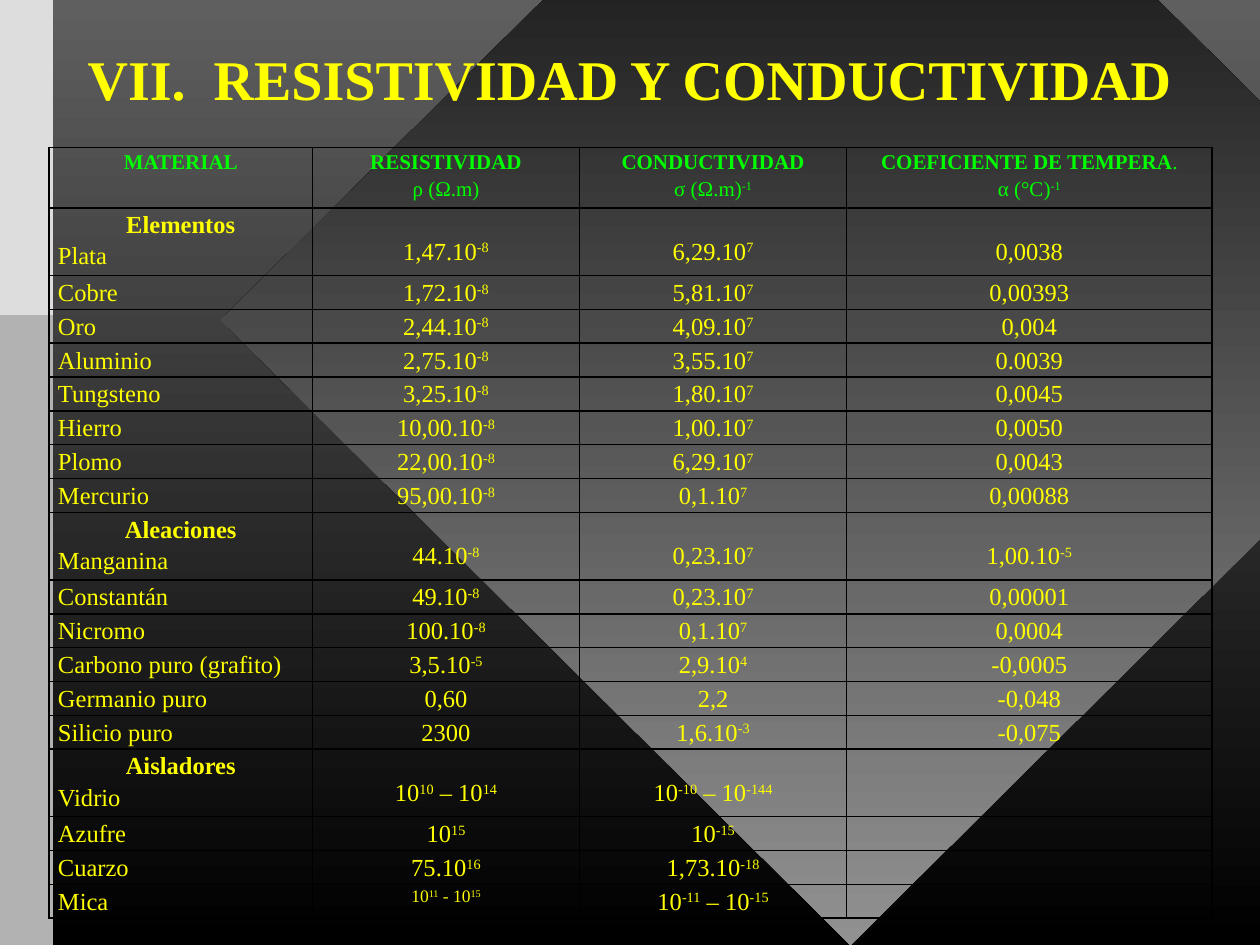
from lxml import etree
from pptx import Presentation
from pptx.dml.color import RGBColor
from pptx.enum.shapes import MSO_SHAPE
from pptx.enum.text import MSO_ANCHOR, PP_ALIGN
from pptx.oxml.ns import qn
from pptx.util import Inches, Pt

LEFT, CENTER = PP_ALIGN.LEFT, PP_ALIGN.CENTER
DIAMOND, RECTANGLE = MSO_SHAPE.DIAMOND, MSO_SHAPE.RECTANGLE
MIDDLE = MSO_ANCHOR.MIDDLE

FONT = "Times New Roman"
YELLOW, GREEN, BLACK = "FFFF00", "00FF00", "000000"
WIDTH, HEIGHT = 10, 7.5

TITLE = "VII.\tRESISTIVIDAD Y CONDUCTIVIDAD"

# Bold heading, plain ending, unit; the text between carets is raised.
HEADINGS = [
    ("MATERIAL", "", ""),
    ("RESISTIVIDAD", "", "ρ (Ω.m)"),
    ("CONDUCTIVIDAD", "", "σ (Ω.m)^-1"),
    ("COEFICIENTE DE TEMPERA", ".", "α (°C)^-1"),
]
GROUPS = {
    "Elementos": [
        ("Plata", "1,47.10^-8", "6,29.10^7", "0,0038"),
        ("Cobre", "1,72.10^-8", "5,81.10^7", "0,00393"),
        ("Oro", "2,44.10^-8", "4,09.10^7", "0,004"),
        ("Aluminio", "2,75.10^-8", "3,55.10^7", "0.0039"),
        ("Tungsteno", "3,25.10^-8", "1,80.10^7", "0,0045"),
        ("Hierro", "10,00.10^-8", "1,00.10^7", "0,0050"),
        ("Plomo", "22,00.10^-8", "6,29.10^7", "0,0043"),
        ("Mercurio", "95,00.10^-8", "0,1.10^7", "0,00088"),
    ],
    "Aleaciones": [
        ("Manganina", "44.10^-8", "0,23.10^7", "1,00.10^-5"),
        ("Constantán", "49.10^-8", "0,23.10^7", "0,00001"),
        ("Nicromo", "100.10^-8", "0,1.10^7", "0,0004"),
        ("Carbono puro (grafito)", "3,5.10^-5", "2,9.10^4", "-0,0005"),
        ("Germanio puro", "0,60", "2,2", "-0,048"),
        ("Silicio puro", "2300", "1,6.10^-3", "-0,075"),
    ],
    "Aisladores": [
        ("Vidrio", "10^10^ – 10^14", "10^-10^ – 10^-144", ""),
        ("Azufre", "10^15", "10^-15", ""),
        ("Cuarzo", "75.10^16", "1,73.10^-18", ""),
        ("Mica", "10^11^ - 10^15", "10^-11^ – 10^-15", ""),
    ],
}
SMALL_VALUE = ("Mica", 1)  # material and column set in smaller type

TABLE_LEFT, TABLE_TOP = 0.39, 1.17
COLUMN_WIDTHS = [2.09, 2.12, 2.12, 2.9]
HEADING_ROW, GROUP_ROW, PLAIN_ROW = 0.48, 0.53, 0.267
GROUP_VALUE_DROP = 0.21  # lowers values to the line under the group name


def color(hex_value):
    return RGBColor.from_string(hex_value)


def fill_downward(fill, top, bottom):
    fill.gradient()
    fill.gradient_angle = 270
    for stop, shade in zip(fill.gradient_stops, (top, bottom)):
        stop.color.rgb = color(shade)


def add_backdrop_shape(slide, kind, left, top, width, height):
    shape = slide.shapes.add_shape(
        kind, Inches(left), Inches(top), Inches(width), Inches(height))
    shape.shadow.inherit = False
    shape.line.fill.background()
    return shape.fill


def add_run(paragraph, text, size, shade, bold=False, raised=False):
    run = paragraph.add_run()
    run.text = text
    run.font.name, run.font.size, run.font.bold = FONT, Pt(size), bold
    run.font.color.rgb = color(shade)
    if raised:
        run.font._element.set("baseline", "30000")


def add_formula(paragraph, formula, size, shade):
    """Raise every second part between carets."""
    for index, part in enumerate(formula.split("^")):
        add_run(paragraph, part, size, shade, raised=index % 2 == 1)


def style_paragraph(paragraph, alignment):
    paragraph.alignment = alignment
    paragraph.line_spacing = 1.15
    return paragraph


def style_cell(cell):
    cell.margin_left = cell.margin_right = Inches(0.07)
    cell.margin_top = cell.margin_bottom = 0
    properties = cell._tc.get_or_add_tcPr()
    for side in ("a:lnL", "a:lnR", "a:lnT", "a:lnB"):
        border = etree.SubElement(properties, qn(side), w=str(Pt(1)))
        solid = etree.SubElement(border, qn("a:solidFill"))
        etree.SubElement(solid, qn("a:srgbClr"), val=BLACK)
    cell.fill.background()


def write_heading(cell, heading, ending, unit):
    paragraph = style_paragraph(cell.text_frame.paragraphs[0], CENTER)
    add_run(paragraph, heading, 12, GREEN, bold=True)
    if ending:
        add_run(paragraph, ending, 12, GREEN)
    if unit:
        add_formula(style_paragraph(cell.text_frame.add_paragraph(), CENTER),
                    unit, 12, GREEN)


def write_material(cell, group, material):
    paragraph = cell.text_frame.paragraphs[0]
    if group:
        add_run(style_paragraph(paragraph, CENTER), group, 14, YELLOW, bold=True)
        paragraph = cell.text_frame.add_paragraph()
    add_run(style_paragraph(paragraph, LEFT), material, 14, YELLOW)


def write_value(cell, value, size, below_group):
    paragraph = style_paragraph(cell.text_frame.paragraphs[0], CENTER)
    if value:
        add_formula(paragraph, value, size, YELLOW)
    else:
        paragraph._p.get_or_add_endParaRPr().set("sz", str(size * 100))
    if below_group:
        cell.margin_top = Inches(GROUP_VALUE_DROP)


def add_materials_table(slide):
    rows = [(group if index == 0 else "", row)
            for group, members in GROUPS.items()
            for index, row in enumerate(members)]
    heights = [HEADING_ROW] + [GROUP_ROW if group else PLAIN_ROW
                               for group, _ in rows]
    table = slide.shapes.add_table(
        len(heights), len(COLUMN_WIDTHS), Inches(TABLE_LEFT), Inches(TABLE_TOP),
        Inches(sum(COLUMN_WIDTHS)), Inches(sum(heights))).table
    table.first_row = table.horz_banding = False
    for column, width in zip(table.columns, COLUMN_WIDTHS):
        column.width = Inches(width)
    for row, height in zip(table.rows, heights):
        row.height = Inches(height)
    for cell in table.iter_cells():
        style_cell(cell)

    for column, heading in enumerate(HEADINGS):
        write_heading(table.cell(0, column), *heading)
    for line, (group, (material, *values)) in enumerate(rows, 1):
        write_material(table.cell(line, 0), group, material)
        for column, value in enumerate(values, 1):
            size = 10 if (material, column) == SMALL_VALUE else 14
            write_value(table.cell(line, column), value, size, bool(group))


def add_title(slide):
    frame = slide.shapes.add_textbox(
        Inches(0.5), Inches(0.3), Inches(9), Inches(0.72)).text_frame
    frame.word_wrap = True
    frame.vertical_anchor = MIDDLE
    paragraph = frame.paragraphs[0]
    paragraph.alignment = CENTER
    paragraph.line_spacing = 0.85
    tabs = etree.SubElement(paragraph._p.get_or_add_pPr(), qn("a:tabLst"))
    etree.SubElement(tabs, qn("a:tab"), pos=str(Inches(1)), algn="l")
    add_run(paragraph, TITLE, 32, YELLOW, bold=True)


def main():
    deck = Presentation()
    deck.slide_width, deck.slide_height = Inches(WIDTH), Inches(HEIGHT)
    slide = deck.slides.add_slide(deck.slide_layouts[6])
    fill_downward(slide.background.fill, "5F5F5F", BLACK)
    fill_downward(add_backdrop_shape(slide, DIAMOND, 1.75, -2.42, 10, 9.92),
                  BLACK, "919191")
    for share, shade in ((1, "B2B2B2"), (1 / 3, "DDDDDD")):
        band = add_backdrop_shape(slide, RECTANGLE, 0, 0, 0.42, HEIGHT * share)
        band.solid()
        band.fore_color.rgb = color(shade)
    add_title(slide)
    add_materials_table(slide)
    deck.save("out.pptx")


if __name__ == "__main__":
    main()
